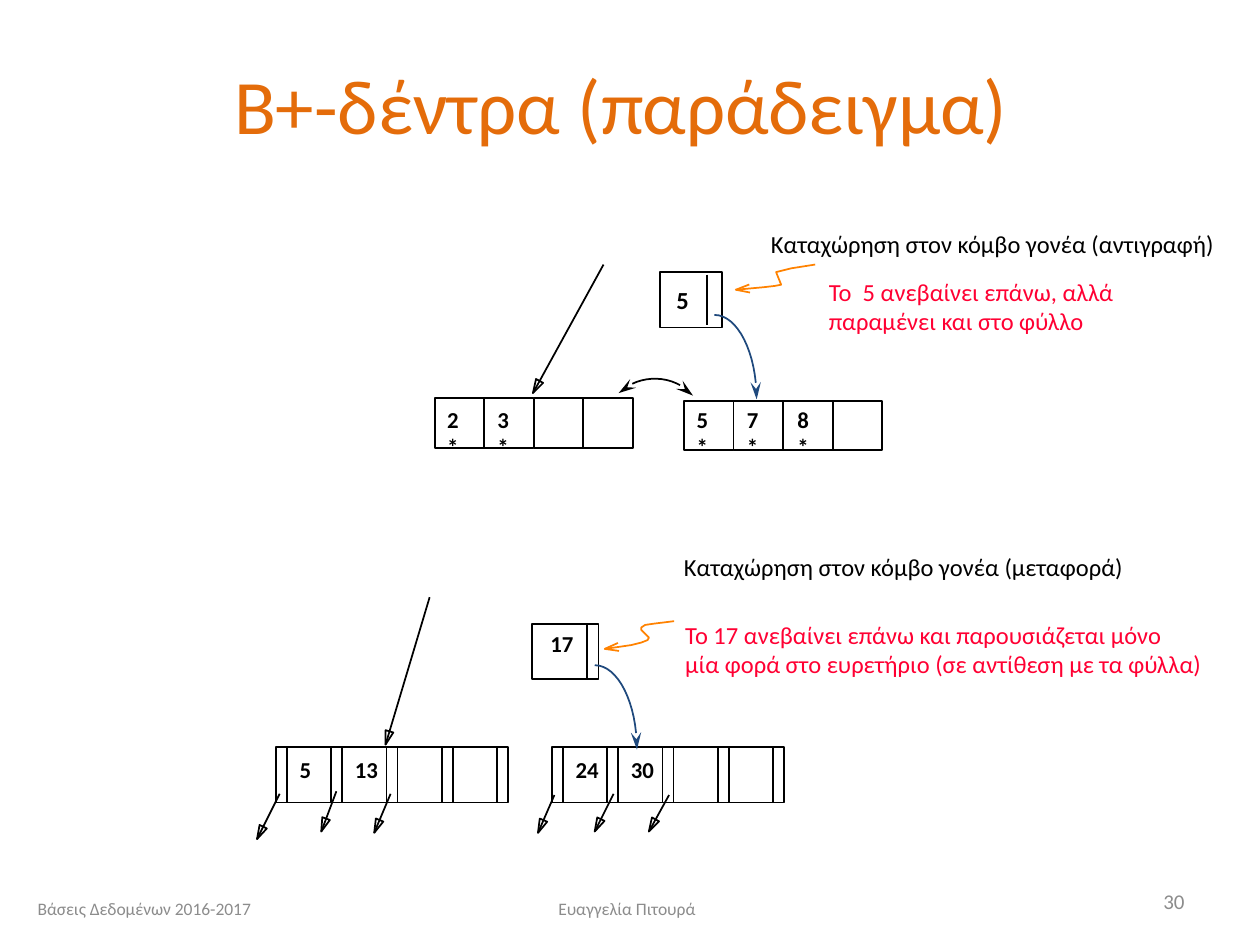
from math import hypot

from lxml import etree
from pptx import Presentation
from pptx.dml.color import RGBColor
from pptx.enum.shapes import MSO_CONNECTOR, MSO_SHAPE
from pptx.enum.text import MSO_ANCHOR, MSO_AUTO_SIZE, PP_ALIGN
from pptx.oxml.ns import qn
from pptx.util import Inches, Pt

STRAIGHT = MSO_CONNECTOR.STRAIGHT
RECTANGLE = MSO_SHAPE.RECTANGLE
TOP, MIDDLE = MSO_ANCHOR.TOP, MSO_ANCHOR.MIDDLE
LEFT, CENTER, RIGHT = PP_ALIGN.LEFT, PP_ALIGN.CENTER, PP_ALIGN.RIGHT
FIT_SHAPE, NO_FIT = MSO_AUTO_SIZE.SHAPE_TO_FIT_TEXT, MSO_AUTO_SIZE.NONE
COLORS = {
    "ink": "000000",
    "title": "E46C0A",
    "remark": "FF0033",
    "squiggle": "FF8200",
    "link": "1F497D",
    "footer": "8C8C8C",
}
COLUMNS, ROWS = 100, 75
LEAF_CELL, INDEX_CELL, POINTER = 3.93, 4.39, 0.87


class TreeSlide:
    """Draws tree nodes, arrows and labels on a grid of 100 columns by 75 rows."""

    def __init__(self, deck):
        """Add a title-only slide and take the grid from the slide size."""
        self.font = "Calibri"
        self.slide = deck.slides.add_slide(deck.slide_layouts[5])
        self.shapes = self.slide.shapes
        self.column = deck.slide_width / COLUMNS
        self.row = deck.slide_height / ROWS

    def place(self, *lengths):
        """Turn alternating columns and rows into slide lengths."""
        units = (self.column, self.row)
        return [round(length * units[i % 2]) for i, length in enumerate(lengths)]

    def format_text(self, box, size, color, bold=False, align=LEFT):
        """Give every run of a box the same font."""
        for para in box.text_frame.paragraphs:
            para.alignment = align
            for span in para.runs:
                span.font.name = self.font
                span.font.size = Pt(size)
                span.font.bold = bold
                span.font.color.rgb = RGBColor.from_string(COLORS[color])

    def outline(self, shape, color):
        """Leave a shape unfilled with a thin line."""
        shape.shadow.inherit = False
        shape.fill.background()
        self.stroke(shape, color)

    def stroke(self, shape, color):
        """Set the line of a shape or connector."""
        shape.line.color.rgb = RGBColor.from_string(COLORS[color])
        shape.line.width = Pt(1)

    def title(self, text, *frame):
        """Fill and move the title placeholder."""
        box = self.shapes.title
        box.left, box.top, box.width, box.height = self.place(*frame)
        box.text_frame.text = text
        box.text_frame.vertical_anchor = MIDDLE
        self.format_text(box, 44, "title", align=CENTER)

    def label(self, text, *frame, size=13, color="ink", bold=False,
              wrap=False, align=LEFT, anchor=TOP):
        """Add a text box."""
        box = self.shapes.add_textbox(*self.place(*frame))
        box.text_frame.text = text
        box.text_frame.word_wrap = wrap
        box.text_frame.auto_size = NO_FIT if wrap else FIT_SHAPE
        box.text_frame.vertical_anchor = anchor
        self.format_text(box, size, color, bold, align)

    def cell(self, *frame):
        """Add one empty rectangle of a node."""
        self.outline(self.shapes.add_shape(RECTANGLE, *self.place(*frame)), "ink")

    def line(self, start, end):
        """Add a straight line."""
        connector = self.shapes.add_connector(STRAIGHT, *self.place(*start, *end))
        etree.SubElement(connector._element.spPr, qn("a:effectLst"))
        self.stroke(connector, "ink")

    def path_line(self, points, color, close=False):
        """Add an outline through the given points."""
        corners = [self.place(*point) for point in points]
        builder = self.shapes.build_freeform(*corners[0])
        builder.add_line_segments(corners[1:], close=close)
        shape = builder.convert_to_shape()
        self.outline(shape, color)
        return shape

    def head(self, start, tip, color="ink", close=True):
        """Add a hollow arrowhead, or an open one, at the tip."""
        across, down = tip[0] - start[0], tip[1] - start[1]
        length = hypot(across, down)
        across, down = across / length, down / length
        wings = [(tip[0] - 1.1 * across + side * down, tip[1] - 1.1 * down - side * across)
                 for side in (0.32, -0.32)]
        self.path_line([wings[0], tip, wings[1]], color, close)

    def arrow(self, start, tip):
        """Add a straight arrow with a hollow head."""
        self.line(start, tip)
        self.head(start, tip)

    def squiggle(self, points):
        """Add a wavy arrow with an open head."""
        self.path_line(points, "squiggle")
        self.head(points[-2], points[-1], "squiggle", close=False)

    def curve(self, controls, color, ends=("tailEnd",)):
        """Add a cubic curve with stealth arrowheads."""
        steps = 16
        points = []
        for step in range(steps + 1):
            t = step / steps
            weights = ((1 - t) ** 3, 3 * t * (1 - t) ** 2, 3 * t ** 2 * (1 - t), t ** 3)
            points.append([sum(w * c[axis] for w, c in zip(weights, controls))
                           for axis in (0, 1)])
        line = self.path_line(points, color).line._get_or_add_ln()
        for end in ends:
            etree.SubElement(line, qn(f"a:{end}"), type="stealth", w="med", len="lg")

    def link(self, left, top):
        """Add the bent arrow from a parent entry to its child."""
        self.curve([(left, top), (left + 1.85, top), (left + 3.35, top + 3),
                    (left + 3.35, top + 6.7)], "link")

    def leaf(self, left, top, keys):
        """Add a leaf node of four cells with starred keys."""
        for index in range(4):
            self.cell(left + index * LEAF_CELL, top, LEAF_CELL, 3.94)
        for index, key in enumerate(keys):
            self.label(f"{key}*", left + index * 4, 31.7, 3.4, 3.2, bold=True, wrap=True)

    def index_node(self, left, top, keys):
        """Add an index node of four keys and five pointers."""
        for index in range(4):
            x = left + index * INDEX_CELL
            self.cell(x, top, INDEX_CELL, 4.4)
            self.line((x + POINTER, top), (x + POINTER, top + 4.4))
        self.cell(left + 4 * INDEX_CELL, top, POINTER, 4.4)
        for index, key in enumerate(keys):
            self.label(key, left + 0.9 + index * INDEX_CELL, top + 0.2,
                       2 + len(key), 3.2, bold=True)


def main():
    """Build the slide and save it."""
    deck = Presentation()
    deck.slide_width, deck.slide_height = Inches(10), Inches(7.5)
    page = TreeSlide(deck)
    page.title("Β+-δέντρα (παράδειγμα)", 4.3, 2, 90, 12.5)

    page.leaf(34.5, 31.6, "23")
    page.leaf(54.3, 31.8, "578")
    page.cell(52.4, 21.6, 4.9, 4.4)
    page.line((56.1, 21.8), (56.1, 25.8))
    page.label("5", 52.7, 22.1, 2.8, 3.3, size=14, bold=True)
    page.arrow((47.9, 21), (42.3, 31.2))
    page.squiggle([(64.7, 21), (62.8, 21.3), (62, 21.5), (61.6, 21.6), (61.8, 22.1),
                   (62, 22.6), (61.5, 22.7), (60.6, 22.8), (58.4, 23)])
    page.curve([(49.1, 31.2), (50.8, 29.6), (53.5, 29.7), (55, 31.4)], "ink",
               ("headEnd", "tailEnd"))
    page.link(56.7, 25)
    page.label("Καταχώρηση στον κόμβο γονέα (αντιγραφή)", 60.2, 17.7, 37.5, 3.4, size=14)
    page.label("Το  5 ανεβαίνει επάνω, αλλά\nπαραμένει και στο φύλλο",
               64.8, 21.5, 24.8, 5.7, size=14, color="remark")

    page.index_node(21.9, 59.3, ["5", "13"])
    page.index_node(43.8, 59.3, ["24", "30"])
    page.cell(42.2, 49.5, 5.3, 4.4)
    page.line((46.6, 49.5), (46.6, 53.9))
    page.label("17", 42.7, 49.5, 4, 3.2, bold=True)
    page.arrow((34.1, 47.4), (30.6, 59.1))
    for start, tip in [((22.2, 63), (20.4, 66.6)), ((26.7, 62.8), (25.5, 66)),
                       ((31, 63), (29.7, 66.1)), ((44, 63.1), (42.7, 66.1)),
                       ((48.7, 63), (47.2, 66)), ((53.1, 63.1), (51.5, 66))]:
        page.arrow(start, tip)
    page.squiggle([(53.5, 49.3), (51.9, 49.5), (51.2, 49.6), (50.9, 49.8), (50.9, 50),
                   (51.2, 50.3), (51.5, 50.6), (51.4, 50.8), (50.9, 51), (50.1, 51.2),
                   (48, 51.5)])
    page.link(47.2, 52.8)
    page.label("Καταχώρηση στον κόμβο γονέα (μεταφορά)", 53.3, 43.3, 37.1, 3.4, size=14)
    page.label("Το 17 ανεβαίνει επάνω και παρουσιάζεται μόνο\n"
               "μία φορά στο ευρετήριο (σε αντίθεση με τα φύλλα)",
               53.4, 48.7, 43.3, 5.7, size=14, color="remark")

    for text, left, top, width, size, align in [
            ("Βάσεις Δεδομένων 2016-2017", 2, 70.1, 23.3, 10, LEFT),
            ("Ευαγγελία Πιτουρά", 33.9, 70.1, 31.7, 10, CENTER),
            ("30", 71.7, 69.5, 23.3, 12, RIGHT)]:
        page.label(text, left, top, width, 4, size=size, color="footer",
                   wrap=True, align=align, anchor=MIDDLE)
    deck.save("out.pptx")


if __name__ == "__main__":
    main()
